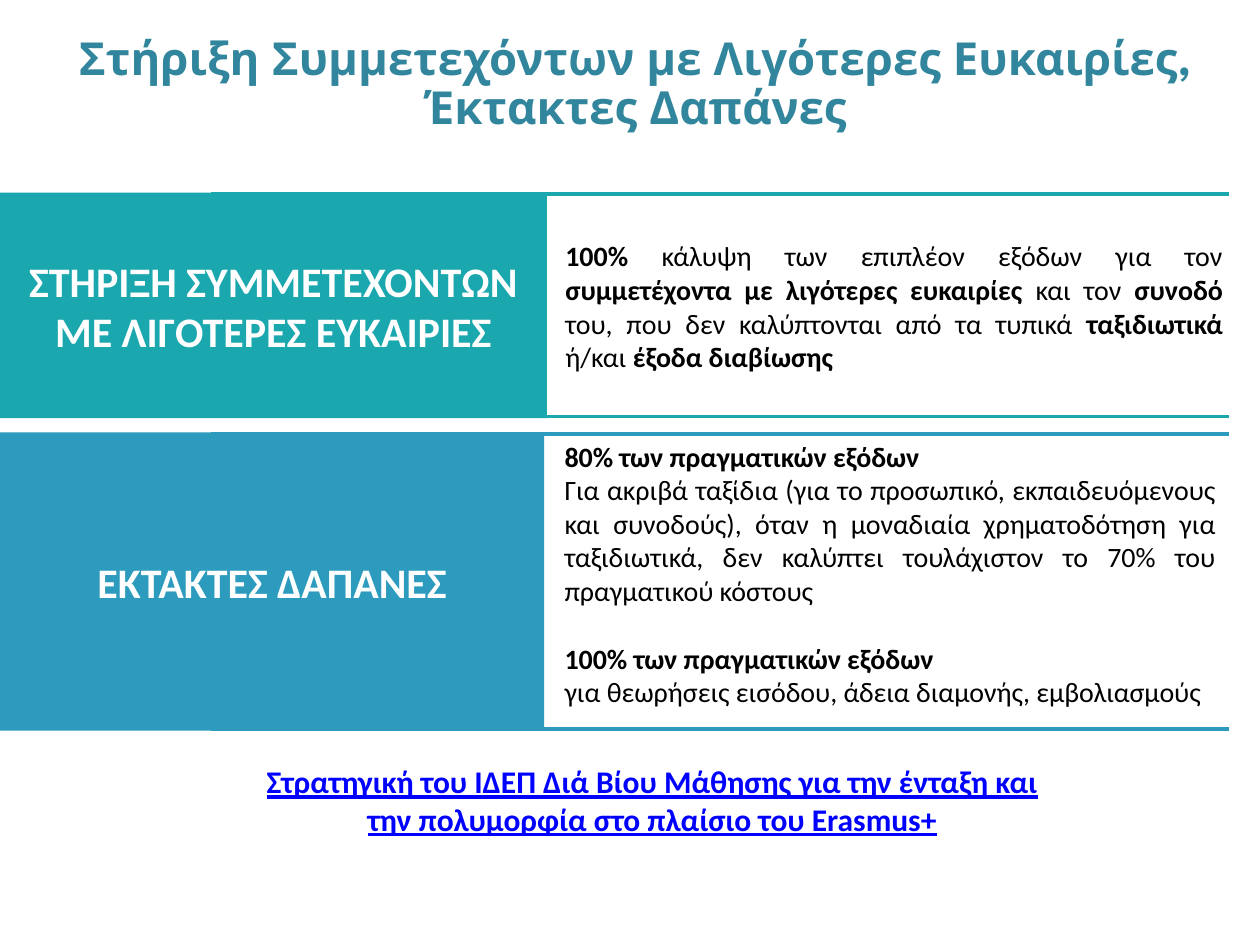
from dataclasses import dataclass

from lxml.etree import SubElement
from pptx import Presentation
from pptx.dml.color import RGBColor
from pptx.enum.shapes import MSO_CONNECTOR, MSO_SHAPE
from pptx.enum.text import MSO_ANCHOR, PP_ALIGN
from pptx.oxml.ns import qn
from pptx.util import Pt


@dataclass(frozen=True)
class Theme:
    head: str = "League Spartan"
    body: str = "Calibri"
    title: str = "31859C"
    teal: str = "1AA7AE"
    blue: str = "2D9BBD"
    link: str = "0000FF"
    black: str = "000000"
    white: str = "FFFFFF"
    big: int = 26
    label: int = 24
    note: int = 18
    small: int = 16


class Deck:
    def __init__(self, theme):
        self.theme = theme
        self.prs = Presentation()
        self.prs.slide_width, self.prs.slide_height = Pt(720), Pt(540)
        self.slide = self.prs.slides.add_slide(self.prs.slide_layouts[6])

    def fill_text(self, frame, paras, size, color, font=None,
                  align=PP_ALIGN.CENTER, anchor=MSO_ANCHOR.TOP, line=False,
                  gaps=None, pitch=None):
        """Each paragraph is a list of (text, bold) runs."""
        frame.word_wrap = True
        frame.vertical_anchor = anchor
        for i, runs in enumerate(paras):
            para = frame.add_paragraph() if i else frame.paragraphs[0]
            para.alignment = align
            if pitch:
                para.line_spacing = pitch
            if gaps and i in gaps:
                para.space_before = Pt(gaps[i])
            for text, bold in runs:
                run = para.add_run()
                run.text = text
                run.font.name = font or self.theme.body
                run.font.size = Pt(size)
                run.font.bold = bold
                run.font.underline = line
                run.font.color.rgb = RGBColor.from_string(color)

    def text(self, x, y, w, h, paras, size, color, **style):
        box = self.slide.shapes.add_textbox(Pt(x), Pt(y), Pt(w), Pt(h))
        self.fill_text(box.text_frame, paras, size, color, **style)

    def panel(self, y, w, h, color, label):
        box = self.slide.shapes.add_shape(
            MSO_SHAPE.RECTANGLE, Pt(0), Pt(y), Pt(w), Pt(h))
        box.shadow.inherit = False
        box.fill.solid()
        box.fill.fore_color.rgb = RGBColor.from_string(color)
        box.line.fill.background()
        self.fill_text(box.text_frame, [[(label, True)]], self.theme.label,
                       self.theme.white, anchor=MSO_ANCHOR.MIDDLE)

    def rule(self, x, y, w, color):
        rule = self.slide.shapes.add_connector(
            MSO_CONNECTOR.STRAIGHT, Pt(x), Pt(y), Pt(x + w), Pt(y))
        rule.line.color.rgb = RGBColor.from_string(color)
        rule.line.width = Pt(2)
        SubElement(rule._element.spPr, qn("a:effectLst"))

    def band(self, y, w, h, color, label):
        self.panel(y, w, h, color, label)
        for edge in (y + 1, y + h - 1):
            self.rule(120.5, edge, 582, color)

    def save(self):
        self.prs.save("out.pptx")


def main():
    theme = Theme()
    deck = Deck(theme)

    # Title
    deck.text(20, 15, 686, 67, [[(
        "Στήριξη Συμμετεχόντων με Λιγότερες Ευκαιρίες, Έκτακτες Δαπάνες", True)]],
        theme.big, theme.title, font=theme.head,
        anchor=MSO_ANCHOR.MIDDLE, pitch=0.9)

    # Support for participants
    deck.band(110, 312.5, 129, theme.teal,
              "ΣΤΗΡΙΞΗ ΣΥΜΜΕΤΕΧΟΝΤΩΝ ΜΕ ΛΙΓΟΤΕΡΕΣ ΕΥΚΑΙΡΙΕΣ")
    deck.text(316, 133, 390, 86, [[
        ("100% ", True),
        ("κάλυψη των επιπλέον εξόδων για τον ", False),
        ("συμμετέχοντα με λιγότερες ευκαιρίες", True),
        (" και τον ", False),
        ("συνοδό", True),
        (" του, που δεν καλύπτονται από τα τυπικά ", False),
        ("ταξιδιωτικά", True),
        (" ή/και ", False),
        ("έξοδα διαβίωσης", True),
    ]], theme.small, theme.black, align=PP_ALIGN.JUSTIFY)

    # Exceptional costs
    deck.band(247, 311, 170.5, theme.blue, "ΕΚΤΑΚΤΕΣ ΔΑΠΑΝΕΣ")
    deck.text(315.5, 247.5, 386.5, 163, [
        [("80% των πραγματικών εξόδων", True)],
        [("Για ακριβά ταξίδια (για το προσωπικό, εκπαιδευόμενους και "
          "συνοδούς), όταν η μοναδιαία χρηματοδότηση για ταξιδιωτικά, δεν "
          "καλύπτει τουλάχιστον το 70% του πραγματικού κόστους", False)],
        [("100% των πραγματικών εξόδων", True)],
        [("για θεωρήσεις εισόδου, άδεια διαμονής, εμβολιασμούς", False)],
    ], theme.small, theme.black, align=PP_ALIGN.JUSTIFY, gaps={2: 19.5})

    # Strategy reference
    deck.text(144.5, 432, 456.5, 51, [[(
        "Στρατηγική του ΙΔΕΠ Διά Βίου Μάθησης για την ένταξη και "
        "την πολυμορφία στο πλαίσιο του Erasmus+", True)]],
        theme.note, theme.link, line=True)

    deck.save()


if __name__ == "__main__":
    main()
